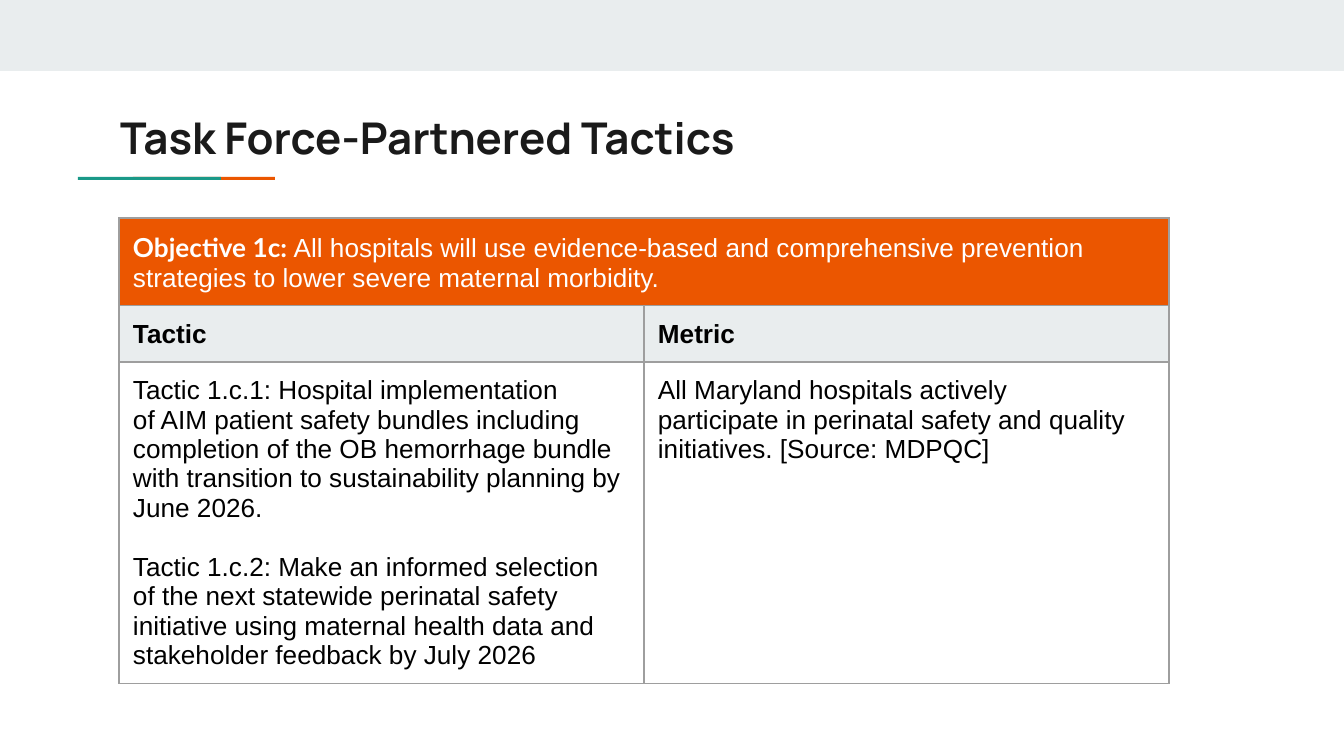
"""Build the slide on Task Force-partnered tactics."""
import pptx
import pptx.dml.color
import pptx.enum.shapes
import pptx.enum.text
import pptx.oxml
import pptx.oxml.ns
import pptx.util

SCALE = 914400 / 134.4
ORANGE, TEAL, PALE, GREY = "EB5600", "1A9988", "E9EDEE", "9E9E9E"
BLACK, WHITE = "000000", "FFFFFF"
TACTICS = [
    [
        "Tactic 1.c.1: Hospital implementation",
        "of AIM patient safety bundles including",
        "completion of the OB hemorrhage bundle",
        "with transition to sustainability planning by",
        "June 2026.",
    ],
    [
        "Tactic 1.c.2: Make an informed selection",
        "of the next statewide perinatal safety",
        "initiative using maternal health data and",
        "stakeholder feedback by July 2026",
    ],
]
METRICS = [
    [
        "All Maryland hospitals actively",
        "participate in perinatal safety and quality",
        "initiatives. [Source: MDPQC]",
    ],
]


def px(size):
    """Turn pixels into EMU."""
    return pptx.util.Emu(round(size * SCALE))


def paint(target, color):
    """Give a fill or font a solid hex colour."""
    if hasattr(target, "solid"):
        target.solid()
        target.fore_color.rgb = pptx.dml.color.RGBColor.from_string(color)
    else:
        target.color.rgb = pptx.dml.color.RGBColor.from_string(color)


def add_run(para, text, color=BLACK, bold=False, face="Arial", size=14):
    """Add one formatted run to a paragraph."""
    run = para.add_run()
    run.text = text
    run.font.name = face
    run.font.size = pptx.util.Pt(size)
    run.font.bold = bold
    paint(run.font, color)


def add_bar(slide, left, top, width, height, color):
    """Add a plain filled rectangle."""
    kind = pptx.enum.shapes.MSO_SHAPE.RECTANGLE
    bar = slide.shapes.add_shape(kind, px(left), px(top), px(width), px(height))
    bar.shadow.inherit = False
    bar.line.fill.background()
    paint(bar.fill, color)


def set_title(slide, text):
    """Place and fill the title."""
    title = slide.shapes.title
    title.left, title.top, title.width, title.height = map(px, (107, 98, 1130, 79))
    frame = title.text_frame
    frame.margin_left = frame.margin_right = px(13)
    frame.margin_top = frame.margin_bottom = px(13)
    frame.word_wrap = True
    frame.auto_size = pptx.enum.text.MSO_AUTO_SIZE.NONE
    frame.vertical_anchor = pptx.enum.text.MSO_ANCHOR.MIDDLE
    para = frame.paragraphs[0]
    para.alignment = pptx.enum.text.PP_ALIGN.LEFT
    add_run(para, text, "1A1A1A", True, "Manrope", 23.4)


def style_cell(cell, color):
    """Set the margins, borders and fill of a cell."""
    cell.margin_left = cell.margin_top = px(14)
    cell.margin_right = cell.margin_bottom = px(13)
    props = cell._tc.get_or_add_tcPr()
    for side in ("lnL", "lnR", "lnT", "lnB"):
        props.append(pptx.oxml.parse_xml(
            f'<a:{side} {pptx.oxml.ns.nsdecls("a")} w="9525"><a:solidFill>'
            f'<a:srgbClr val="{GREY}"/></a:solidFill></a:{side}>'))
    paint(cell.fill, color)


def fill_cell(cell, blocks):
    """Write blocks of lines with a gap between blocks."""
    frame = cell.text_frame
    para = frame.paragraphs[0]
    for i, block in enumerate(blocks):
        for j, line in enumerate(block):
            if i or j:
                para = frame.add_paragraph()
            if i and not j:
                para.space_before = pptx.util.Pt(16)
            add_run(para, line)


def add_grid(slide):
    """Add the table of tactics and metrics."""
    frame = slide.shapes.add_table(3, 2, px(119), px(218), px(1050), px(464))
    table = frame.table
    table.first_row = table.horz_banding = False
    for col in table.columns:
        col.width = px(525)
    for row, height, color in zip(table.rows, (87, 56, 321), (ORANGE, PALE, WHITE)):
        row.height = px(height)
        for cell in row.cells:
            style_cell(cell, color)
    head = table.cell(0, 0)
    head.merge(table.cell(0, 1))
    para = head.text_frame.paragraphs[0]
    add_run(para, "Objective 1c: ", WHITE, True, "Lato")
    add_run(para, "All hospitals will use evidence-based and comprehensive "
            "prevention strategies to lower severe maternal morbidity.", WHITE)
    for col, (name, blocks) in enumerate((("Tactic", TACTICS), ("Metric", METRICS))):
        add_run(table.cell(1, col).text_frame.paragraphs[0], name, bold=True)
        fill_cell(table.cell(2, col), blocks)


def main():
    """Build and save the slide."""
    deck = pptx.Presentation()
    deck.slide_width, deck.slide_height = px(1344), px(756)
    slide = deck.slides.add_slide(deck.slide_layouts[5])
    add_bar(slide, 0, 0, 1344, 71, PALE)
    add_bar(slide, 133, 177, 142, 3, ORANGE)
    add_bar(slide, 78, 177, 143, 3, TEAL)
    set_title(slide, "Task Force-Partnered Tactics")
    add_grid(slide)
    deck.save("out.pptx")


if __name__ == "__main__":
    main()
